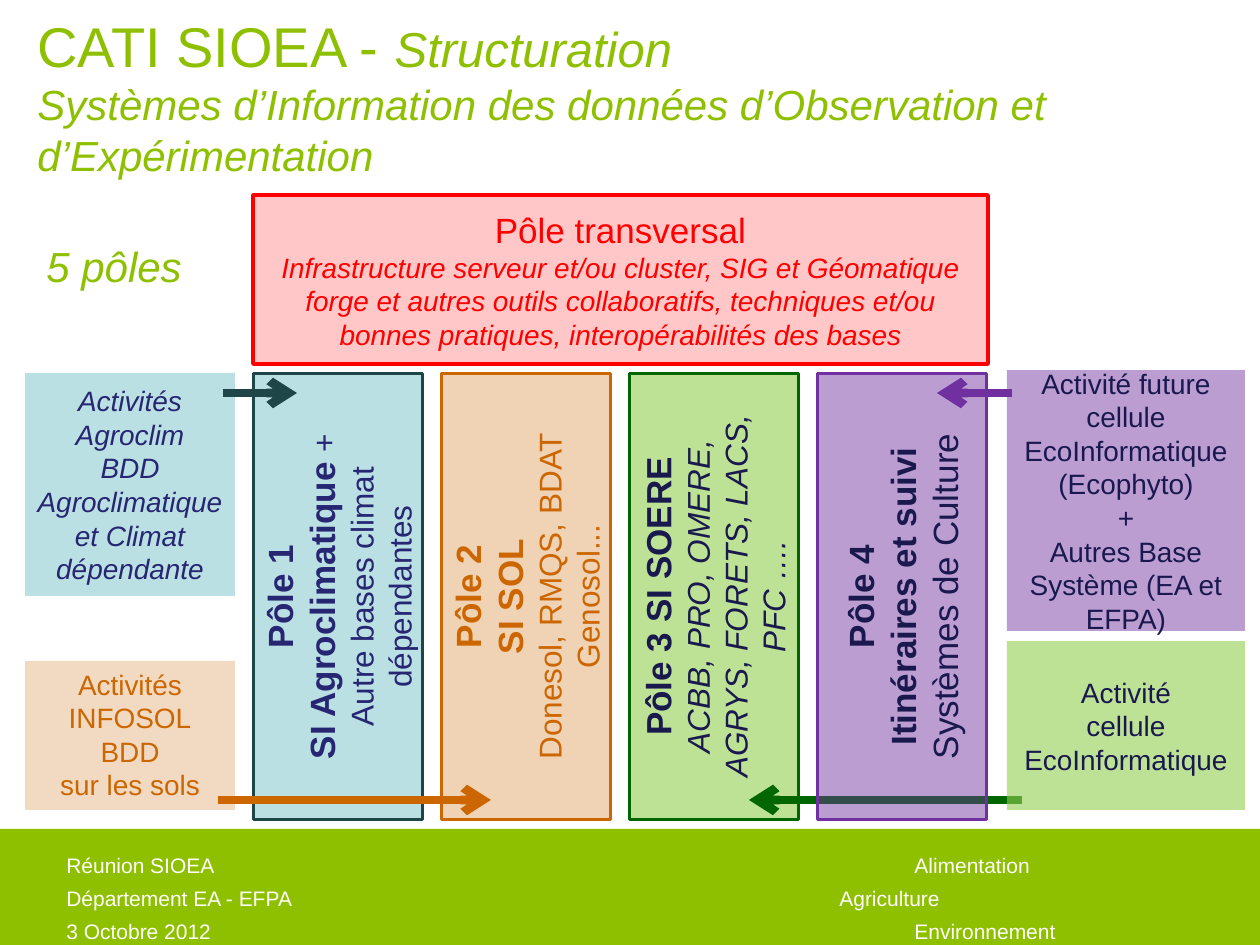
"""Build the slide on the structure of CATI SIOEA and its five poles."""
from dataclasses import dataclass

from lxml.etree import SubElement
from pptx import Presentation
from pptx.dml.color import RGBColor
from pptx.enum.shapes import MSO_CONNECTOR, MSO_SHAPE
from pptx.enum.text import MSO_ANCHOR, MSO_AUTO_SIZE, PP_ALIGN
from pptx.oxml.ns import qn
from pptx.util import Emu, Pt


@dataclass(frozen=True)
class Theme:
    font: str = "Arial"
    lime: str = "8EC000"
    white: str = "FFFFFF"
    red: str = "FF0000"
    ice: str = "BBE0E3"
    teal: str = "1E4649"
    navy: str = "262673"
    ink: str = "19194D"
    orange: str = "CC6600"
    grass: str = "92D050"
    green: str = "006600"
    purple: str = "7030A0"
    title: int = 32
    subtitle: int = 28
    lead: int = 24
    head: int = 20
    body: int = 18
    label: int = 16
    foot: int = 12


T = Theme()
PX = 914400 / 126

prs = Presentation()
prs.slide_width = Emu(round(1260 * PX))
prs.slide_height = Emu(round(945 * PX))
s = prs.slides.add_slide(prs.slide_layouts[6])


def box(paras, at, color=T.ink, size=T.label, style="", fill=None, alpha=100, line=None,
        align=PP_ALIGN.CENTER, anchor=MSO_ANCHOR.MIDDLE, rotation=0, spacing=None,
        indents=(), wrap=True, grow=False):
    at = [Emu(round(v * PX)) for v in at]
    if fill:
        sp = s.shapes.add_shape(MSO_SHAPE.RECTANGLE, *at)
        sp.shadow.inherit = False
        sp.fill.solid()
        sp.fill.fore_color.rgb = RGBColor.from_string(fill)
        if alpha < 100:
            clr = sp.fill._xPr.find(qn("a:solidFill"))[0]
            SubElement(clr, qn("a:alpha"), val=str(alpha * 1000))
        if line:
            sp.line.color.rgb = RGBColor.from_string(line)
            sp.line.width = Pt(2)
        else:
            sp.line.fill.background()
    else:
        sp = s.shapes.add_textbox(*at)
    sp.rotation = rotation
    tf = sp.text_frame
    tf.word_wrap = wrap
    tf.vertical_anchor = anchor
    tf.auto_size = MSO_AUTO_SIZE.SHAPE_TO_FIT_TEXT if grow else MSO_AUTO_SIZE.NONE
    for i, para in enumerate(paras):
        p = tf.add_paragraph() if i else tf.paragraphs[0]
        p.alignment = align
        if spacing:
            p.line_spacing = spacing
        if indents and indents[i]:
            p._p.get_or_add_pPr().set("marL", str(round(indents[i] * PX)))
        runs = [(para, size, style)] if isinstance(para, str) else para
        for text, points, face in runs:
            for j, part in enumerate(text.split("\n")):
                if j:
                    p.add_line_break()
                if part:
                    r = p.add_run()
                    r.text = part
                    r.font.name = T.font
                    r.font.size = Pt(points)
                    r.font.bold = "b" in face
                    r.font.italic = "i" in face
                    r.font.color.rgb = RGBColor.from_string(color)


def arrow(x1, x2, y, color):
    x1, x2, y = (Emu(round(v * PX)) for v in (x1, x2, y))
    c = s.shapes.add_connector(MSO_CONNECTOR.STRAIGHT, x1, y, x2, y)
    c.line.color.rgb = RGBColor.from_string(color)
    c.line.width = Pt(5)
    SubElement(c.line._get_or_add_ln(), qn("a:tailEnd"), type="arrow")
    SubElement(c._element.spPr, qn("a:effectLst"))


footer = dict(color=T.white, size=T.foot, align=PP_ALIGN.LEFT, anchor=MSO_ANCHOR.TOP,
              spacing=1.3, grow=True)
box([], (0, 829, 1260, 116), fill=T.lime)
box(["Alimentation", "Agriculture", "Environnement"], (827, 839, 256, 112),
    indents=(75, 0, 75), **footer)
box(["Réunion SIOEA", "Département EA - EFPA", "3 Octobre 2012"], (54, 839, 338, 112), **footer)

box([[("Pôle transversal\n", T.head, ""),
      ("Infrastructure serveur et/ou cluster, SIG et Géomatique", T.label, "i")],
     "forge et autres outils collaboratifs, techniques et/ou bonnes pratiques, "
     "interopérabilités des bases"],
    (253, 195, 735, 169), color=T.red, style="i", fill=T.red, alpha=22, line=T.red)

poles = [
    ([("Pôle 1\nSI Agroclimatique ", T.head, "b"),
      ("+\nAutre bases climat dépendantes", T.body, "")], T.navy, T.ice, 100, T.teal),
    ([("Pôle 2\nSI SOL\n", T.head, "b"),
      ("Donesol, RMQS, BDAT Genosol...", T.body, "")], T.orange, T.orange, 29, T.orange),
    ([("Pôle 3 SI SOERE\n", T.head, "b"),
      ("ACBB, PRO, OMERE, AGRYS, FORETS, LACS, PFC ….", T.body, "i")],
     T.ink, T.grass, 60, T.green),
    ([("Pôle 4\nItinéraires et suivi ", T.head, "b"),
      ("Systèmes de Culture", T.head, "")], T.ink, T.purple, 47, T.purple),
]
for i, (runs, color, fill, alpha, line) in enumerate(poles):
    if i == 3:
        arrow(1022, 749, 800, T.green)
    box([runs], (115 + 188 * i, 512, 446, 169), color=color, fill=fill, alpha=alpha,
        line=line, rotation=270)

box(["Activités Agroclim\nBDD Agroclimatique et Climat dépendante"], (25, 373, 210, 223),
    color=T.navy, style="i", fill=T.ice)
box(["Activités INFOSOL\nBDD\nsur les sols"], (25, 661, 210, 149), color=T.orange,
    fill=T.orange, alpha=24, anchor=MSO_ANCHOR.TOP, grow=True)
box(["Activité future", "cellule EcoInformatique", "(Ecophyto)", "+",
     "Autres Base Système (EA et EFPA)"], (1007, 370, 238, 261), fill=T.purple, alpha=47)
box(["Activité", "cellule EcoInformatique"], (1007, 641, 238, 169), fill=T.grass, alpha=60)

arrow(218, 491, 800, T.orange)
arrow(1012, 937, 393, T.purple)
arrow(223, 297, 393, T.teal)

box([[("CATI SIOEA - ", T.title, ""), ("Structuration", T.subtitle, "i")],
     "Systèmes d’Information des données d’Observation et d’Expérimentation"],
    (25, 37, 1304, 117), color=T.lime, size=T.lead, style="i", align=PP_ALIGN.LEFT)
box(["5 pôles"], (34, 234, 161, 63), color=T.lime, size=T.lead, style="i",
    align=PP_ALIGN.LEFT, anchor=MSO_ANCHOR.TOP, wrap=False, grow=True)

prs.save("out.pptx")
